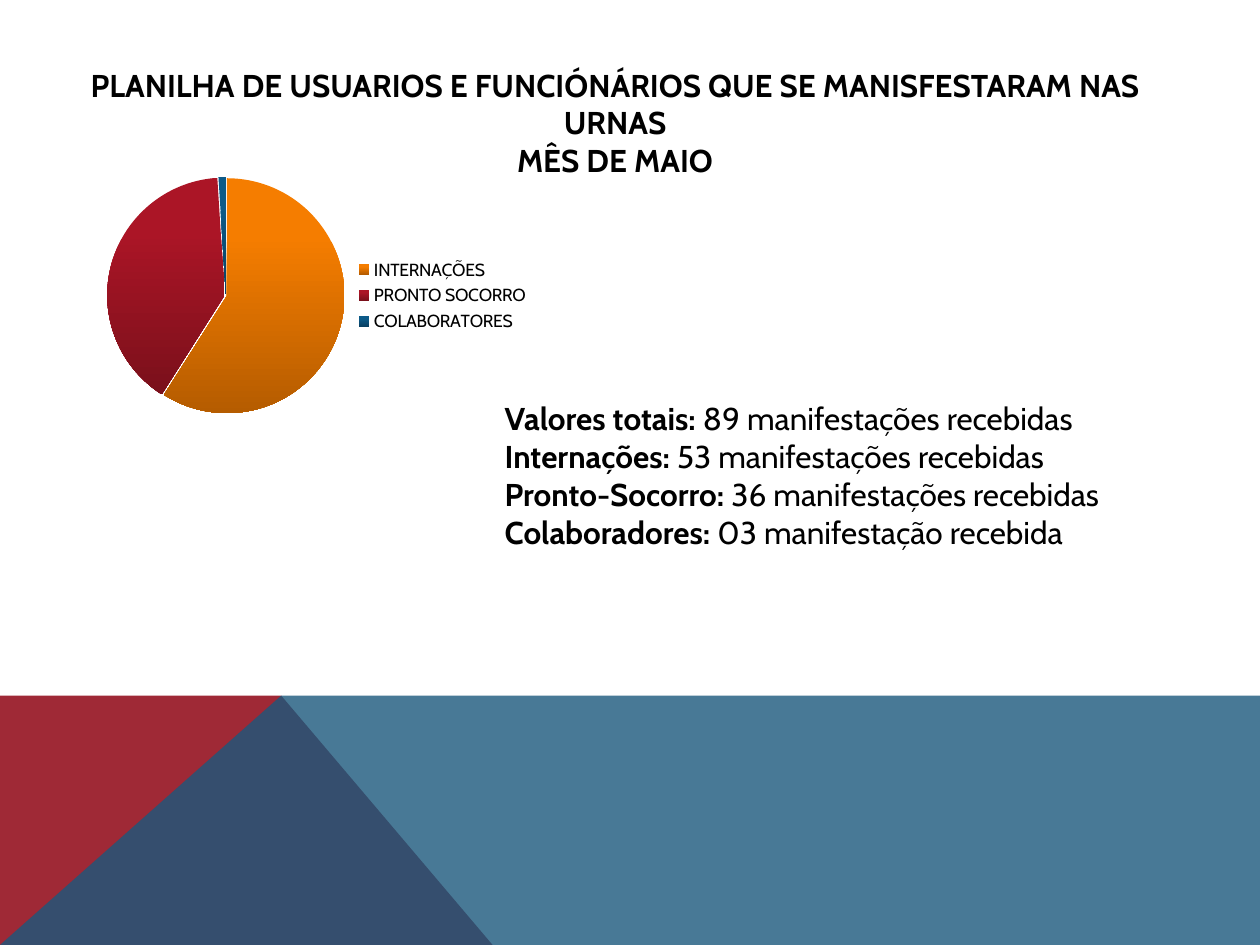
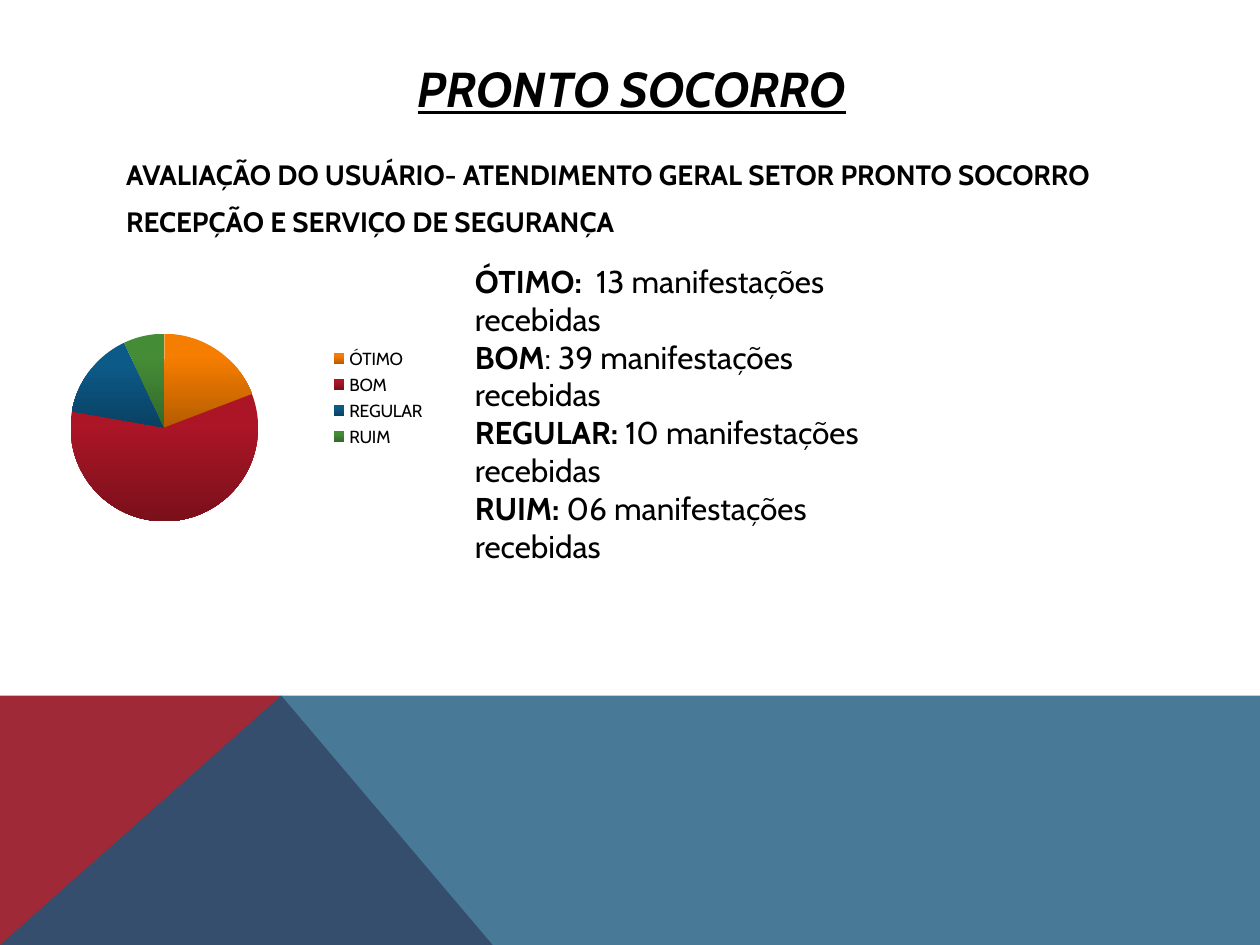
from lxml import etree
from pptx import Presentation
from pptx.chart.data import CategoryChartData
from pptx.dml.color import RGBColor
from pptx.enum.chart import XL_CHART_TYPE, XL_LEGEND_POSITION
from pptx.enum.text import MSO_ANCHOR, PP_ALIGN
from pptx.oxml import parse_xml
from pptx.oxml.ns import nsdecls, qn
from pptx.util import Pt

PIE = XL_CHART_TYPE.PIE
LEGEND_RIGHT = XL_LEGEND_POSITION.RIGHT
MIDDLE, TOP = MSO_ANCHOR.MIDDLE, MSO_ANCHOR.TOP
LEFT, CENTER = PP_ALIGN.LEFT, PP_ALIGN.CENTER

# Shared look
FONT = "Cabin"
BLACK, RED, BLUE = "000000", "9F2936", "1B587C"
SLICE_GRADIENTS = [("F57D00", "B55C00"), ("AB1526", "7A101B"),
                   ("0C5A88", "0A4163"), ("458C37", "336929")]
WIDTH, HEIGHT = 720, 540
BAND_TOP, PEAK_X = 397.5, 160.7
BANDS = [
    (RED, 100, [(0, HEIGHT), (0, BAND_TOP), (PEAK_X, BAND_TOP), (281.5, HEIGHT)]),
    (BLUE, 80, [(0, HEIGHT), (PEAK_X, BAND_TOP), (WIDTH, BAND_TOP), (WIDTH, HEIGHT)]),
]

# Content: areas are left, top, width, height; paragraphs are (bold, regular)
SLIDES = [
    {
        "texts": [
            {"area": (16.5, 34, 670, 73), "size": 18, "align": CENTER, "paragraphs": [
                ("PLANILHA DE USUARIOS E FUNCIÓNÁRIOS QUE SE MANISFESTARAM NAS URNAS", ""),
                ("MÊS DE MAIO", "")]},
            {"area": (281.3, 224.6, 394, 94.5), "size": 18, "paragraphs": [
                ("Valores totais: ", "89 manifestações recebidas"),
                ("Internações: ", "53 manifestações recebidas"),
                ("Pronto-Socorro: ", "36 manifestações recebidas"),
                ("Colaboradores: ", "03 manifestação recebida")]},
        ],
        "chart": {"area": (0, 90, 309.6, 157.7), "plot": (0.198, 0.07, 0.438, 0.86),
                  "explosion": 1,
                  "slices": {"INTERNAÇÕES": 59, "PRONTO SOCORRO": 40, "COLABORATORES": 1}},
    },
    {
        "texts": [
            {"area": (65, 28.8, 592, 43.2), "size": 28, "align": CENTER,
             "anchor": MIDDLE, "accent": True, "paragraphs": [("PRONTO SOCORRO", "")]},
            {"area": (65, 86.4, 592, 281.5), "size": 16, "space_before": 8, "paragraphs": [
                ("AVALIAÇÃO DO USUÁRIO- ATENDIMENTO GERAL SETOR PRONTO SOCORRO", ""),
                ("RECEPÇÃO E SERVIÇO DE SEGURANÇA", "")]},
            {"area": (264.3, 146.2, 258.5, 203.8), "size": 18, "paragraphs": [
                ("ÓTIMO:  ", "13 manifestações recebidas"),
                ("BOM", ": 39 manifestações recebidas"),
                ("REGULAR: ", "10 manifestações recebidas"),
                ("RUIM: ", "06 manifestações recebidas")]},
        ],
        "chart": {"area": (0, 146.2, 250.6, 162), "plot": (0.16, 0.275, 0.43, 0.662),
                  "explosion": 0,
                  "slices": {"ÓTIMO": 19, "BOM": 58, "REGULAR": 15, "RUIM": 7}},
    },
]


def color(value):
    return RGBColor.from_string(value)


def points(values):
    return [Pt(value) for value in values]


def add_bands(page):
    for fill, opacity, corners in BANDS:
        start, *others = [points(corner) for corner in corners]
        builder = page.shapes.build_freeform(*start, scale=1.0)
        builder.add_line_segments(others, close=True)
        band = builder.convert_to_shape()
        band.shadow.inherit = False
        band.fill.solid()
        band.fill.fore_color.rgb = color(fill)
        band.line.fill.background()
        if opacity < 100:
            tint = band.fill._xPr.find(qn("a:solidFill"))[0]
            etree.SubElement(tint, qn("a:alpha"), val=str(opacity * 1000))


def add_text(page, area, size, paragraphs, align=LEFT, anchor=TOP,
             space_before=0, accent=False):
    frame = page.shapes.add_textbox(*points(area)).text_frame
    frame.word_wrap = True
    frame.vertical_anchor = anchor
    for index, parts in enumerate(paragraphs):
        para = frame.add_paragraph() if index else frame.paragraphs[0]
        para.alignment = align
        para.space_before = Pt(space_before)
        for text, bold in zip(parts, (True, False)):
            if not text:
                continue
            span = para.add_run()
            span.text = text
            span.font.name = FONT
            span.font.size = Pt(size)
            span.font.bold = bold
            span.font.color.rgb = color(BLACK)
            if accent:
                span.font.italic = span.font.underline = True


def place_plot(chart, plot):
    """Fix the inner plot area as fractions of the chart."""
    plot_area = chart._chartSpace.chart.plotArea
    for old in plot_area.findall(qn("c:layout")):
        plot_area.remove(old)
    edges = "".join(f'<c:{key} val="{value}"/>' for key, value in zip("xywh", plot))
    plot_area.insert(0, parse_xml(
        f'<c:layout {nsdecls("c")}><c:manualLayout><c:layoutTarget val="inner"/>'
        f'<c:xMode val="edge"/><c:yMode val="edge"/>{edges}'
        '</c:manualLayout></c:layout>'))


def add_pie(page, area, plot, explosion, slices):
    data = CategoryChartData()
    data.categories = list(slices)
    data.add_series("Series 1", list(slices.values()))
    chart = page.shapes.add_chart(PIE, *points(area), data).chart
    chart.has_title = False
    chart.font.name = FONT
    chart.font.size = Pt(10)
    chart.font.color.rgb = color(BLACK)
    chart.has_legend = True
    chart.legend.position = LEGEND_RIGHT
    chart.legend.include_in_layout = True
    chart.plots[0].vary_by_categories = True
    place_plot(chart, plot)

    series = chart.plots[0].series[0]
    for index, shades in zip(range(len(slices)), SLICE_GRADIENTS):
        style = series.points[index].format
        style.fill.gradient()
        style.fill.gradient_angle = 270
        for stop, shade, position in zip(style.fill.gradient_stops, shades, (0.25, 1)):
            stop.color.rgb = color(shade)
            stop.position = position
        style.line.fill.background()
    if explosion:
        first_point = series._element.find(qn("c:dPt"))
        first_point.addprevious(parse_xml(
            f'<c:explosion {nsdecls("c")} val="{explosion}"/>'))


def main():
    deck = Presentation()
    deck.slide_width, deck.slide_height = Pt(WIDTH), Pt(HEIGHT)
    for content in SLIDES:
        page = deck.slides.add_slide(deck.slide_layouts[6])
        add_bands(page)
        add_pie(page, **content["chart"])
        for text in content["texts"]:
            add_text(page, **text)
    deck.save("out.pptx")


if __name__ == "__main__":
    main()
